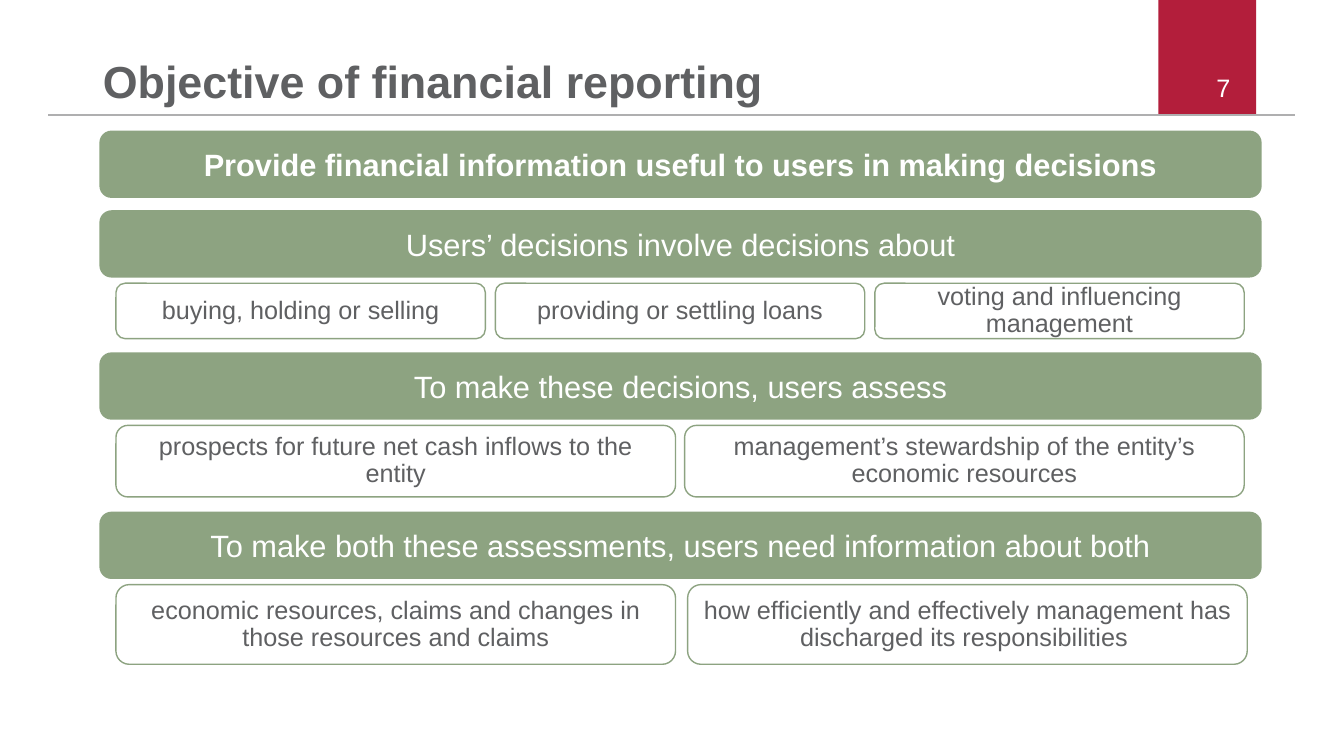
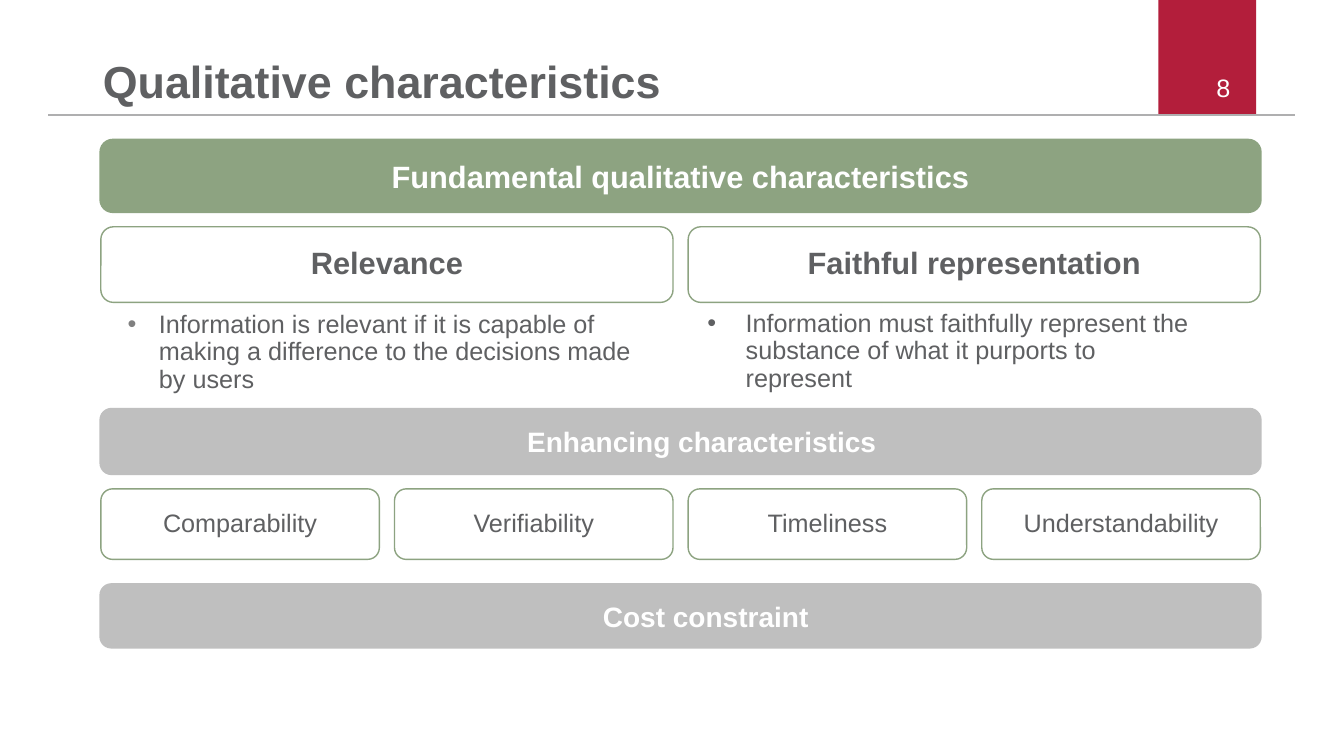
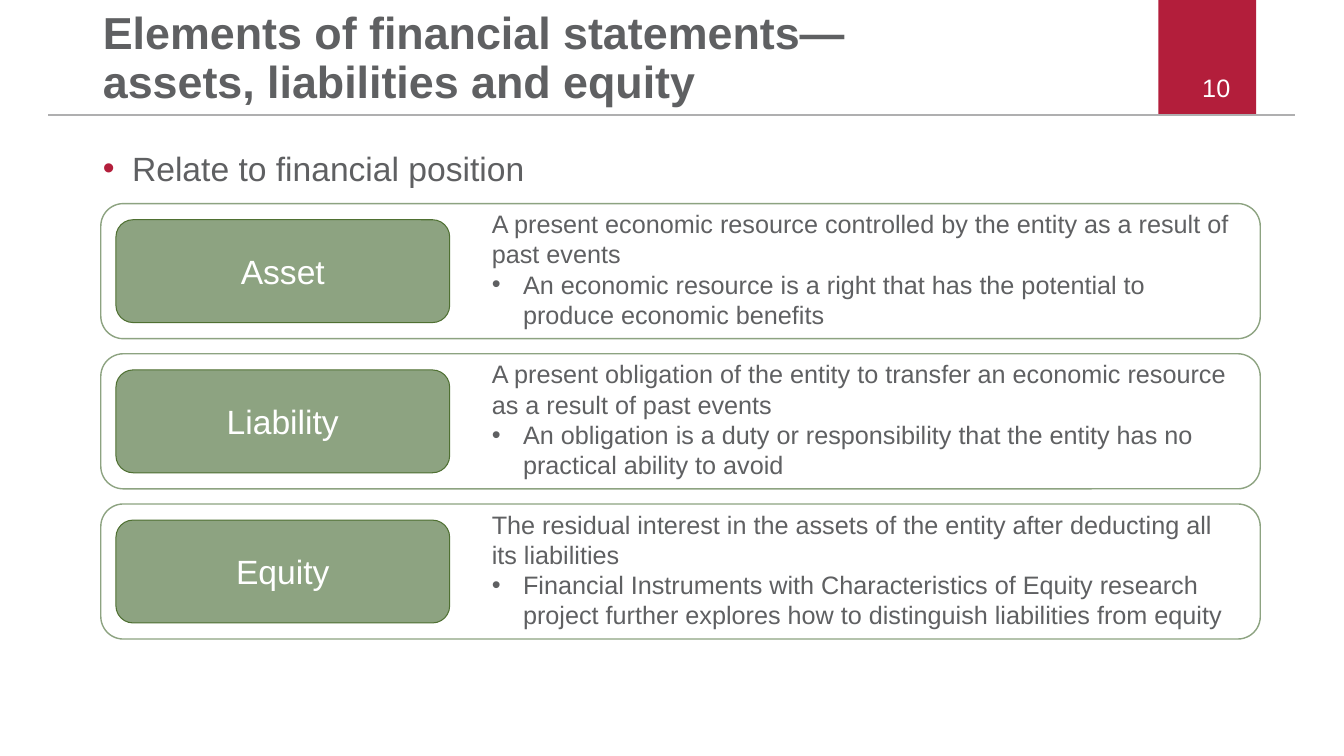
from lxml.etree import SubElement
from pptx import Presentation
from pptx.dml.color import RGBColor
from pptx.enum.shapes import MSO_CONNECTOR as Connector, MSO_SHAPE as Shape
from pptx.enum.text import MSO_ANCHOR as Anchor, PP_ALIGN as Align
from pptx.oxml.ns import qn
from pptx.util import Inches, Pt

RED = RGBColor(0xB3, 0x1E, 0x3B)
GREEN = RGBColor(0x8D, 0xA3, 0x81)
DARK_GREEN = RGBColor(0x4F, 0x70, 0x32)
SILVER = RGBColor(0xBF, 0xBF, 0xBF)
RULE_GREY = RGBColor(0xAF, 0xAF, 0xB0)
BULLET_GREY = RGBColor(0x80, 0x80, 0x80)
TEXT_GREY = RGBColor(0x5F, 0x60, 0x62)
WHITE = RGBColor(0xFF, 0xFF, 0xFF)

FONT = "Arial"
LEFT, WIDTH = 1, 11.5
INSET_LEFT, INSET_WIDTH = 1.15, 11.19
BAR_HEIGHT = 0.64


def apply_formats(target, formats):
    """Set each named attribute of the target."""
    for name, value in formats.items():
        setattr(target, name, value)


def set_margins(frame, margin):
    """Give a text frame the same margin on all sides."""
    sides = ("left", "top", "right", "bottom")
    apply_formats(frame, {f"margin_{side}": Inches(margin) for side in sides})


def add_bullet(para, indent, color):
    """Give a paragraph a hanging round bullet."""
    properties = para._p.get_or_add_pPr()
    properties.set("marL", str(Inches(indent)))
    properties.set("indent", str(-Inches(indent)))
    tint = SubElement(properties, qn("a:buClr"))
    SubElement(tint, qn("a:srgbClr"), val=str(color))
    SubElement(properties, qn("a:buFont"), typeface=FONT)
    SubElement(properties, qn("a:buChar"), char="•")


def write(para, text, size, color=TEXT_GREY, bold=False, align=Align.LEFT, spacing=1.0):
    """Fill a paragraph with text in one style."""
    para.text = text
    apply_formats(para, {"alignment": align, "line_spacing": spacing})
    for span in para.runs:
        apply_formats(span.font, {"name": FONT, "size": Pt(size), "bold": bold})
        span.font.color.rgb = color


def add_text_box(page, left, top, width, height, anchor=Anchor.TOP, margin=None):
    """Add a wrapping text box and return its frame."""
    box = page.shapes.add_textbox(Inches(left), Inches(top), Inches(width), Inches(height))
    frame = box.text_frame
    apply_formats(frame, {"word_wrap": True, "vertical_anchor": anchor})
    if margin is not None:
        set_margins(frame, margin)
    return frame


def add_panel(page, left, top, width, height, fill=None, line=None, weight=1,
              kind=Shape.ROUNDED_RECTANGLE):
    """Add a flat shape and return its text frame."""
    panel = page.shapes.add_shape(kind, Inches(left), Inches(top), Inches(width), Inches(height))
    panel.shadow.inherit = False
    for paint, color in ((panel.fill, fill), (panel.line.fill, line)):
        if color is None:
            paint.background()
        else:
            paint.solid()
            paint.fore_color.rgb = color
    if line is not None:
        panel.line.width = Pt(weight)
    frame = panel.text_frame
    apply_formats(frame, {"word_wrap": True, "vertical_anchor": Anchor.MIDDLE})
    set_margins(frame, 0.08)
    return frame


def add_bar(page, top, text, height=BAR_HEIGHT, color=GREEN, size=22, bold=False, indent=0):
    """Add a full-width filled heading bar."""
    para = add_panel(page, LEFT, top, WIDTH, height, color, color, 2).paragraphs[0]
    para._p.get_or_add_pPr().set("marL", str(Inches(indent)))
    write(para, text, size, WHITE, bold, Align.CENTER)


def add_card_row(page, left, top, width, height, texts, gap, size=18, bold=False):
    """Share a box between equal outlined cards."""
    card_width = (width - gap * (len(texts) - 1)) / len(texts)
    for index, text in enumerate(texts):
        card_left = left + index * (card_width + gap)
        frame = add_panel(page, card_left, top, card_width, height, line=GREEN)
        write(frame.paragraphs[0], text, size, bold=bold, align=Align.CENTER, spacing=0.9)


def add_explanation(page, left, top, width, height, text, indent, color):
    """Add a bulleted explanation below a card."""
    para = add_panel(page, left, top, width, height).paragraphs[0]
    add_bullet(para, indent, color)
    write(para, text, 18, spacing=0.9)


def add_definition(page, left, top, width, height, term, meaning, detail):
    """Add an outlined panel with a term and its definition."""
    add_panel(page, left, top, width, height, line=GREEN)
    label = add_panel(page, left + 0.15, top + 0.16, 3.31, height - 0.32, GREEN, DARK_GREEN, 0.75)
    write(label.paragraphs[0], term, 24, WHITE, align=Align.CENTER)
    frame = add_text_box(page, left + 3.78, top, width - 3.86, height)
    write(frame.paragraphs[0], meaning, 18)
    point = frame.add_paragraph()
    add_bullet(point, 0.31, TEXT_GREY)
    write(point, detail, 18)


def add_page(deck, title, number):
    """Add a slide with the shared header band, rule, number and title."""
    page = deck.slides.add_slide(deck.slide_layouts[6])
    add_panel(page, 11.49, 0, 0.97, 1.14, RED, kind=Shape.RECTANGLE)
    rule = page.shapes.add_connector(
        Connector.STRAIGHT, Inches(0.48), Inches(1.14), Inches(12.84), Inches(1.14))
    rule.line.color.rgb = RULE_GREY
    rule.line.width = Pt(1.2)
    SubElement(rule._element.spPr, qn("a:effectLst"))
    corner = add_text_box(page, 9.19, 0.67, 3.11, 0.4, Anchor.MIDDLE)
    write(corner.paragraphs[0], str(number), 18, WHITE, align=Align.RIGHT)
    heading = add_text_box(page, 1.02, 0, 9.88, 1.07, Anchor.BOTTOM, 0)
    write(heading.paragraphs[0], title, 32, bold=True, spacing=0.9)
    return page


def build_objective(deck):
    """Build the slide on the objective of financial reporting."""
    page = add_page(deck, "Objective of financial reporting", 7)
    add_bar(page, 1.31, "Provide financial information useful to users in making decisions", bold=True)
    sections = [
        (2.1, 0.55, 0.1, INSET_WIDTH, "Users’ decisions involve decisions about",
         ["buying, holding or selling", "providing or settling loans",
          "voting and influencing management"]),
        (3.51, 0.71, 0.09, INSET_WIDTH, "To make these decisions, users assess",
         ["prospects for future net cash inflows to the entity",
          "management’s stewardship of the entity’s economic resources"]),
        (5.09, 0.79, 0.12, INSET_WIDTH + 0.03,
         "To make both these assessments, users need information about both",
         ["economic resources, claims and changes in those resources and claims",
          "how efficiently and effectively management has discharged its responsibilities "]),
    ]
    for top, height, gap, width, heading, texts in sections:
        add_bar(page, top, heading)
        add_card_row(page, INSET_LEFT, top + BAR_HEIGHT + 0.07, width, height, texts, gap)


def build_characteristics(deck):
    """Build the slide on qualitative characteristics."""
    page = add_page(deck, "Qualitative characteristics", 8)
    add_bar(page, 1.39, "Fundamental qualitative characteristics", 0.71, bold=True)
    add_card_row(page, LEFT, 2.25, WIDTH, 0.75, ["Relevance", "Faithful representation"],
                 0.15, 22, True)
    add_explanation(
        page, 1.15, 3.12, 5.28, 0.76,
        "Information is relevant if it is capable of making a difference to the decisions made by users",
        0.31, BULLET_GREY)
    add_explanation(
        page, 6.9, 3.12, 5.12, 0.74,
        "Information must faithfully represent the substance of what it purports to represent",
        0.38, TEXT_GREY)
    add_bar(page, 4.06, "Enhancing characteristics ", BAR_HEIGHT, SILVER, 20, True, 0.5)
    add_card_row(page, LEFT, 4.85, WIDTH, 0.7,
                 ["Comparability", "Verifiability", "Timeliness", "Understandability"], 0.15)
    add_bar(page, 5.8, "Cost constraint", 0.62, SILVER, 20, True, 0.5)


def build_elements(deck):
    """Build the slide on the elements of financial statements."""
    page = add_page(deck, "Elements of financial statements—\vassets, liabilities and equity", 10)
    lead = add_text_box(page, 1.02, 1.47, 11.44, 0.5, margin=0).paragraphs[0]
    add_bullet(lead, 0.29, RED)
    write(lead, "Relate to financial position", 24)
    definitions = [
        ("Asset",
         "A present economic resource controlled by the entity as a result of past events",
         "An economic resource is a right that has the potential to produce economic benefits"),
        ("Liability",
         "A present obligation of the entity to transfer an economic resource as a result of past events",
         "An obligation is a duty or responsibility that the entity has no practical ability to avoid"),
        ("Equity",
         "The residual interest in the assets of the entity after deducting all its liabilities",
         "Financial Instruments with Characteristics of Equity research project further explores "
         "how to distinguish liabilities from equity"),
    ]
    height, gap = 1.34, 0.15
    for index, definition in enumerate(definitions):
        add_definition(page, LEFT, 2.02 + index * (height + gap), WIDTH, height, *definition)


def main():
    """Build and save the deck."""
    deck = Presentation()
    apply_formats(deck, {"slide_width": Inches(13.33), "slide_height": Inches(7.5)})
    for build in (build_objective, build_characteristics, build_elements):
        build(deck)
    deck.save("out.pptx")


if __name__ == "__main__":
    main()
